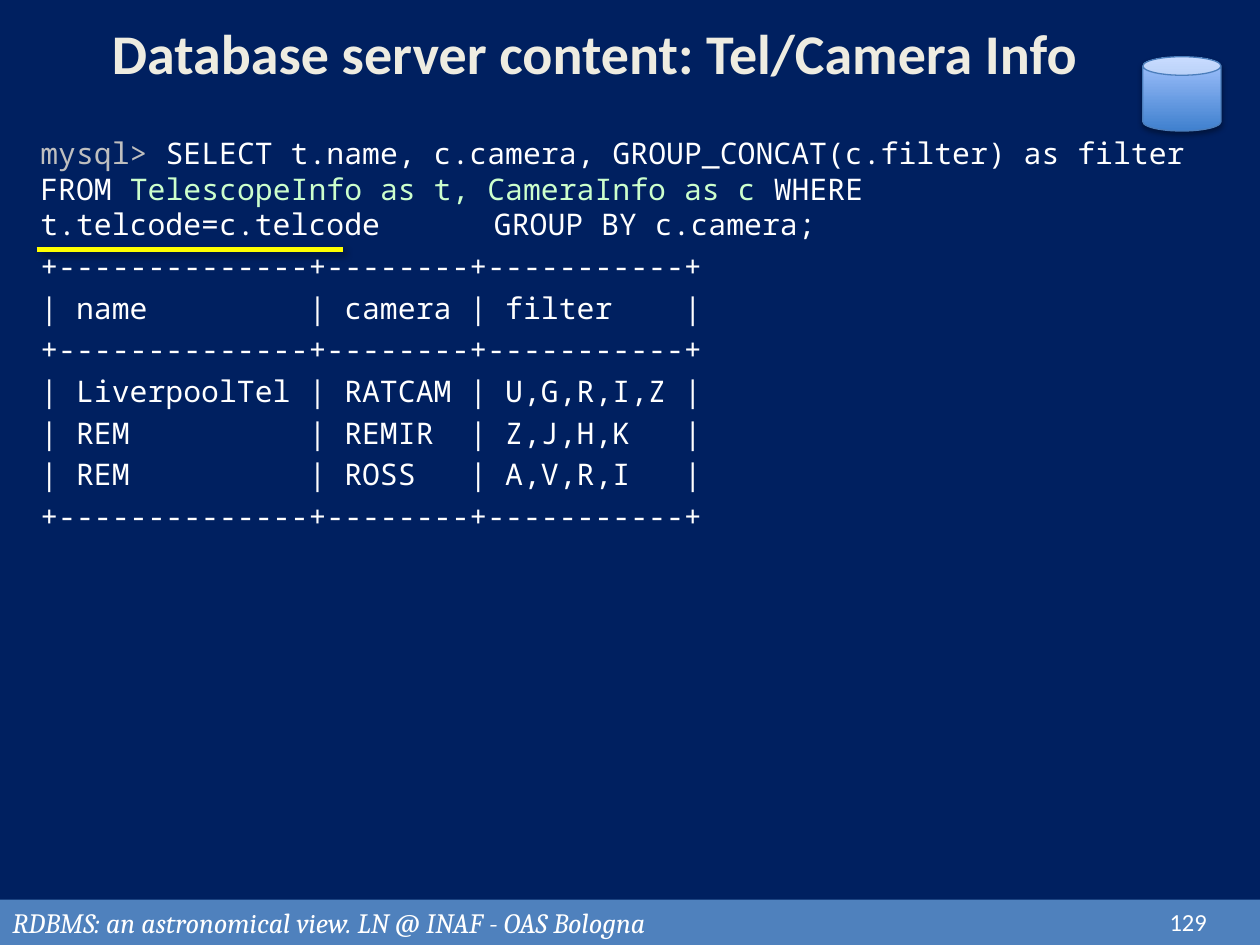
from collections import namedtuple

from lxml import etree
from pptx import Presentation
from pptx import util as u
from pptx.dml.color import RGBColor
from pptx.enum import shapes, text
from pptx.oxml import ns

NAVY = RGBColor(0x00, 0x20, 0x60)
BAR = RGBColor(0x4F, 0x81, 0xBD)
CAN_DARK = RGBColor(0x3F, 0x80, 0xCE)
CAN_LIGHT = RGBColor(0xA4, 0xC4, 0xFF)
CAN_EDGE = RGBColor(0x4B, 0x7E, 0xBC)
CREAM = RGBColor(0xEE, 0xEC, 0xE1)
WHITE = RGBColor(0xFF, 0xFF, 0xFF)
GREY = RGBColor(0xBF, 0xBF, 0xBF)
MINT = RGBColor(0xCC, 0xFF, 0xCC)
YELLOW = RGBColor(0xFF, 0xFF, 0x00)

COLS, ROWS = 100, 75
WIDTH, HEIGHT = u.Inches(10), u.Inches(7.5)

QUERY = [
    ("mysql>", GREY),
    (" SELECT t.name, c.camera, GROUP_CONCAT(c.filter) as filter FROM ", WHITE),
    ("TelescopeInfo as t, CameraInfo as c", MINT),
    (" WHERE t.telcode=c.telcode\t\tGROUP BY c.camera;", WHITE),
]
RULE = "+--------------+--------+-----------+"
RESULT = [
    RULE,
    "| name         | camera | filter    |",
    RULE,
    "| LiverpoolTel | RATCAM | U,G,R,I,Z |",
    "| REM          | REMIR  | Z,J,H,K   |",
    "| REM          | ROSS   | A,V,R,I   |",
    RULE,
]


class Box(namedtuple("Box", "x y w h")):
    """A region measured in grid columns and rows."""

    def inner(self, x, y, w, h):
        """Return a box offset from this one's corner."""
        return Box(self.x + x, self.y + y, w, h)

    def emu(self):
        """Return left, top, width and height in slide units."""
        cw, rh = WIDTH / COLS, HEIGHT / ROWS
        return [round(v) for v in (self.x * cw, self.y * rh, self.w * cw, self.h * rh)]


def add_effect(sp, blur=0, dist=0, angle=0, alpha=0):
    """Give a shape or connector a soft black shadow."""
    lst = etree.SubElement(sp._element.spPr, ns.qn("a:effectLst"))
    shadow = etree.SubElement(
        lst, ns.qn("a:outerShdw"), blurRad=str(u.Pt(blur)), dist=str(u.Pt(dist)),
        dir=str(angle * 60000), algn="ctr", rotWithShape="0")
    color = etree.SubElement(shadow, ns.qn("a:srgbClr"), val="000000")
    etree.SubElement(color, ns.qn("a:alpha"), val=str(alpha * 1000))


def add_tabs(p):
    """Set left tab stops on a paragraph at an even pitch."""
    lst = etree.SubElement(p._p.get_or_add_pPr(), ns.qn("a:tabLst"))
    for stop in [0.08] + [0.72 * k for k in range(1, 8)]:
        etree.SubElement(lst, ns.qn("a:tab"), pos=str(u.Inches(stop)), algn="l")


def write(p, content, font="Calibri", size=14, color=WHITE, bold=False,
          italic=False, align=text.PP_ALIGN.LEFT):
    """Append one formatted run to a paragraph."""
    p.alignment = align
    r = p.add_run()
    r.text = content
    r.font.name, r.font.size = font, u.Pt(size)
    r.font.bold, r.font.italic = bold, italic
    r.font.color.rgb = color


def add_frame(s, box, anchor=text.MSO_ANCHOR.MIDDLE):
    """Add a wrapping text box and return its frame."""
    tf = s.shapes.add_textbox(*box.emu()).text_frame
    tf.word_wrap, tf.vertical_anchor = True, anchor
    return tf


def add_header(s, box):
    """Place the title and the database symbol."""
    can = s.shapes.add_shape(shapes.MSO_SHAPE.CAN, *box.inner(82.8, 3.7, 6.2, 5.9).emu())
    can.fill.gradient()
    can.fill.gradient_angle = 90
    stops = can.fill.gradient_stops
    for i, color in enumerate((CAN_DARK, CAN_LIGHT)):
        stops[i].color.rgb, stops[i].position = color, i
    can.line.color.rgb, can.line.width = CAN_EDGE, u.Pt(0.75)
    add_effect(can, blur=3.1, dist=1.8, angle=90, alpha=35)
    tf = add_frame(s, box.inner(0, 0, box.w, 6.7))
    write(tf.paragraphs[0], "Database server content: Tel/Camera Info",
          size=32, color=CREAM, bold=True)


def add_query(s, box):
    """Place the query, its result rows and the underline."""
    tf = add_frame(s, box, text.MSO_ANCHOR.TOP)
    tf.margin_left = tf.margin_right = u.Inches(0.04)
    for i, runs in enumerate([QUERY] + [[(row, WHITE)] for row in RESULT]):
        p = tf.add_paragraph() if i else tf.paragraphs[0]
        add_tabs(p)
        if i:
            p.space_before = u.Pt(3.4)
        for content, color in runs:
            write(p, content, font="Noto Sans Mono", size=17, color=color)
    x, y, w, _ = box.inner(0.1, 9.6, 24.3, 0).emu()
    line = s.shapes.add_connector(shapes.MSO_CONNECTOR.STRAIGHT, x, y, x + w, y)
    line.line.color.rgb, line.line.width = YELLOW, u.Pt(2.5)
    add_effect(line, blur=4, dist=3, angle=45, alpha=43)


def add_footer(s, box):
    """Place the footer bar and the slide number."""
    bar = s.shapes.add_shape(shapes.MSO_SHAPE.RECTANGLE, *box.emu())
    bar.shadow.inherit = False
    bar.fill.solid()
    bar.fill.fore_color.rgb = BAR
    bar.line.fill.background()
    bar.text_frame.vertical_anchor = text.MSO_ANCHOR.TOP
    write(bar.text_frame.paragraphs[0],
          "RDBMS: an astronomical view. LN @ INAF - OAS Bologna",
          font="Cambria", size=16, italic=True)
    tf = add_frame(s, box.inner(91.4, 0.2, 5.8, 3.1))
    write(tf.paragraphs[0], "129", align=text.PP_ALIGN.CENTER)


def main():
    """Build the slide and save it."""
    prs = Presentation()
    prs.slide_width, prs.slide_height = WIDTH, HEIGHT
    s = prs.slides.add_slide(prs.slide_layouts[6])
    s.background.fill.solid()
    s.background.fill.fore_color.rgb = NAVY
    add_footer(s, Box(0, 71.4, COLS, 3.6))
    add_header(s, Box(7.9, 0.8, 89.3, 9.6))
    add_query(s, Box(2.8, 10.2, 94.1, 34.2))
    prs.save("out.pptx")


if __name__ == "__main__":
    main()
